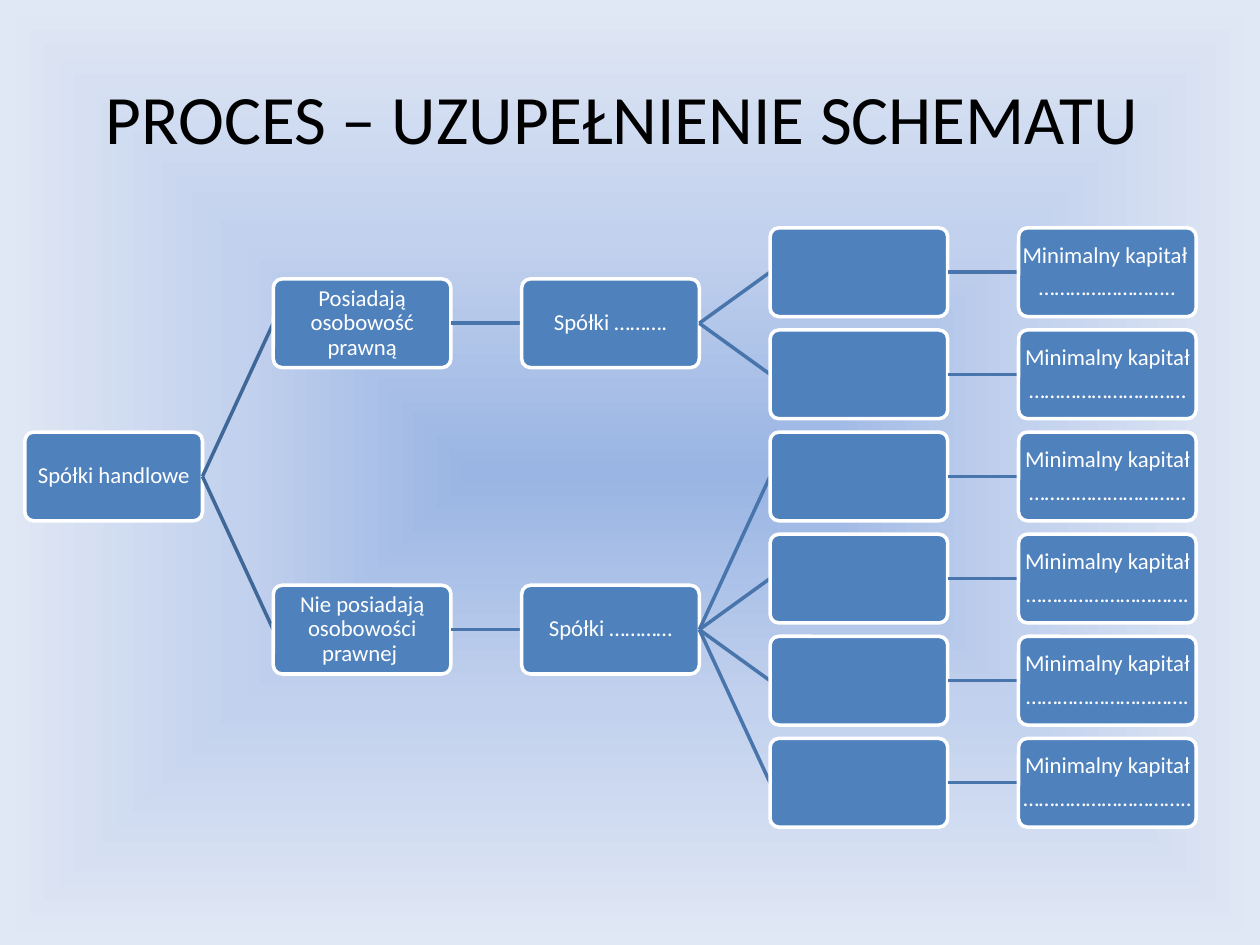
from dataclasses import dataclass, field

from lxml import etree
from pptx import Presentation
from pptx import util as u
from pptx.dml import color
from pptx.enum import shapes, text
from pptx.oxml import ns

Pt = u.Pt
FONT = "Calibri"
LEFT, TOP = 14.2, 130.2
WIDE, HIGH = 101.5, 50.7
COL, ROW = 141.95, 58.35


@dataclass
class Node:
    lines: list[str] = field(default_factory=list)
    kids: list["Node"] = field(default_factory=list)
    slot: float = 0

    @property
    def row(self) -> float:
        if not self.kids:
            return self.slot
        return (self.kids[0].row + self.kids[-1].row) / 2


def paint(part, tint: str) -> None:
    part.solid()
    part.fore_color.rgb = color.RGBColor.from_string(tint)


def write(para, words: str, size: float, tint: str) -> None:
    para.alignment = text.PP_ALIGN.CENTER
    run = para.add_run()
    run.text = words
    run.font.name = FONT
    run.font.size = Pt(size)
    paint(run.font.fill, tint)


def draw_back(slide, stops: list[tuple[int, str]]) -> None:
    slide.background.fill.solid()
    back = slide.element.find(".//" + ns.qn("p:bgPr"))
    back.remove(back[0])
    grad = etree.Element(ns.qn("a:gradFill"), rotWithShape="1")
    marks = etree.SubElement(grad, ns.qn("a:gsLst"))
    for place, tint in stops:
        mark = etree.SubElement(marks, ns.qn("a:gs"), pos=str(place * 1000))
        etree.SubElement(mark, ns.qn("a:srgbClr"), val=tint)
    shade = etree.SubElement(grad, ns.qn("a:path"), {"path": "shape"})
    mid = dict.fromkeys("ltrb", "50000")
    etree.SubElement(shade, ns.qn("a:fillToRect"), mid)
    back.insert(0, grad)


def draw_title(slide, words: str) -> None:
    box = slide.shapes.add_textbox(Pt(36), Pt(21.6), Pt(648), Pt(90))
    frame = box.text_frame
    frame.word_wrap = True
    frame.vertical_anchor = text.MSO_ANCHOR.MIDDLE
    write(frame.paragraphs[0], words, 39.6, "000000")


def draw_box(slide, node: Node, col: int) -> None:
    box = slide.shapes.add_shape(
        shapes.MSO_SHAPE.ROUNDED_RECTANGLE,
        Pt(LEFT + col * COL), Pt(TOP + node.row * ROW), Pt(WIDE), Pt(HIGH))
    box.adjustments[0] = 0.1
    box.shadow.inherit = False
    paint(box.fill, "4F81BD")
    paint(box.line.fill, "FFFFFF")
    box.line.width = Pt(2)
    frame = box.text_frame
    frame.word_wrap = True
    frame.vertical_anchor = text.MSO_ANCHOR.MIDDLE
    frame.margin_left = frame.margin_right = Pt(0.7)
    frame.margin_top = frame.margin_bottom = Pt(0.7)
    for i, words in enumerate(node.lines):
        para = frame.add_paragraph() if i else frame.paragraphs[0]
        write(para, words, 13, "FFFFFF")
        para.line_spacing = 0.9
        props = para._p.get_or_add_pPr()
        gap = etree.SubElement(props, ns.qn("a:spcAft"))
        etree.SubElement(gap, ns.qn("a:spcPct"), val="35000")


def draw_link(slide, node: Node, kid: Node, col: int) -> None:
    start = LEFT + col * COL + WIDE
    mid = TOP + HIGH / 2
    link = slide.shapes.add_connector(
        shapes.MSO_CONNECTOR.STRAIGHT,
        Pt(start), Pt(mid + node.row * ROW),
        Pt(start + COL - WIDE), Pt(mid + kid.row * ROW))
    paint(link.line.fill, "4875AC" if col else "3F6797")
    link.line.width = Pt(2)
    etree.SubElement(link._element.spPr, ns.qn("a:effectLst"))


def draw_tree(slide, node: Node, col: int = 0) -> None:
    draw_box(slide, node, col)
    for kid in node.kids:
        draw_link(slide, node, kid, col)
        draw_tree(slide, kid, col + 1)


def make_tree() -> Node:
    dots = ["……………………..", "…………………………", "…………………………",
            "………………………….", "………………………….", "………………………….."]
    heads = ["Minimalny kapitał "] + ["Minimalny kapitał"] * 5
    firms = [Node(kids=[Node([head, dot], slot=i)])
             for i, (head, dot) in enumerate(zip(heads, dots))]
    return Node(["Spółki handlowe"], [
        Node(["Posiadają osobowość prawną"],
             [Node(["Spółki ………."], firms[:2])]),
        Node(["Nie posiadają osobowości prawnej "],
             [Node(["Spółki …………"], firms[2:])]),
    ])


def main() -> None:
    deck = Presentation()
    deck.slide_width, deck.slide_height = Pt(720), Pt(540)
    slide = deck.slides.add_slide(deck.slide_layouts[6])
    draw_back(slide, [(0, "9AB5E4"), (50, "C2D1ED"), (100, "E1E8F5")])
    draw_title(slide, "PROCES – UZUPEŁNIENIE SCHEMATU ")
    draw_tree(slide, make_tree())
    deck.save("out.pptx")


if __name__ == "__main__":
    main()
